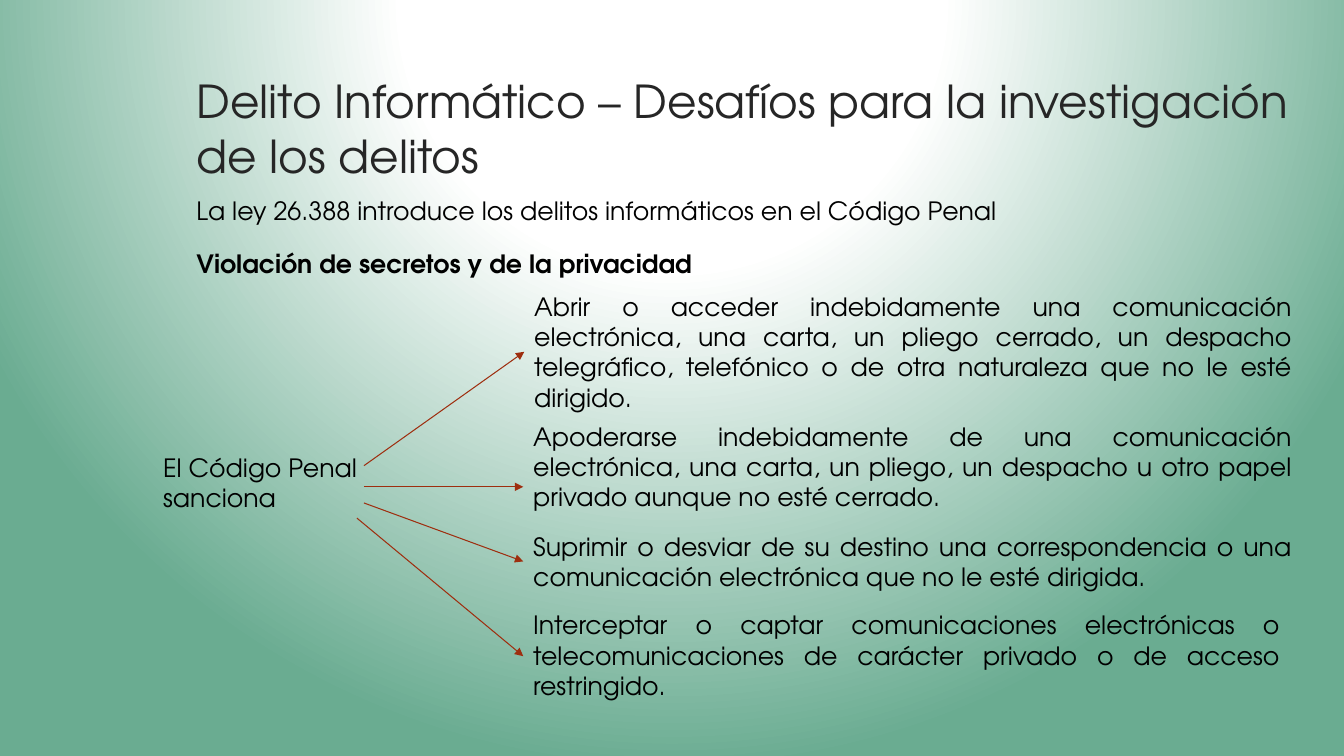
from dataclasses import dataclass

from pptx import Presentation
from pptx.dml.color import RGBColor
from pptx.enum.shapes import MSO_CONNECTOR
from pptx.enum.text import MSO_ANCHOR, MSO_AUTO_SIZE, PP_ALIGN
from pptx.oxml import parse_xml
from pptx.oxml.ns import nsdecls, qn
from pptx.util import Pt

STRAIGHT = MSO_CONNECTOR.STRAIGHT
LEFT, JUSTIFY = PP_ALIGN.LEFT, PP_ALIGN.JUSTIFY
TOP = MSO_ANCHOR.TOP
GROW, FIXED = MSO_AUTO_SIZE.SHAPE_TO_FIT_TEXT, MSO_AUTO_SIZE.NONE
EMU_PER_PX = 9144
TITLE_ONLY = 5


@dataclass(frozen=True)
class Theme:
    """Colours, font and type sizes of the slide."""
    font: str = "TeX Gyre Adventor"
    title_size: float = 32.4
    body_size: float = 18
    line_width: float = 0.75
    title: str = "262626"
    body: str = "000000"
    arrow: str = "9E2E0F"
    glow: str = "FFFFFF"
    edge: str = "6AAC91"


THEME = Theme()

TITLE = "Delito Informático – Desafíos para la investigación de los delitos"
LAW = "La ley 26.388 introduce los delitos informáticos en el Código Penal"
CHAPTER = "Violación de secretos y de la privacidad"
SOURCE = "El Código Penal sanciona"
OFFENCES = [
    ("Abrir o acceder indebidamente una comunicación electrónica, una carta, un pliego cerrado, "
     "un despacho telegráfico, telefónico o de otra naturaleza que no le esté dirigido.",
     (368, 0, 771, 131), (209, 178), (368, 65)),
    ("Apoderarse indebidamente de una comunicación electrónica, una carta, un pliego, "
     "un despacho u otro papel privado aunque no esté cerrado.",
     (367, 129, 772, 101), (209, 199), (367, 199)),
    ("Suprimir o desviar de su destino una correspondencia o una comunicación electrónica "
     "que no le esté dirigida.",
     (367, 238, 772, 71), (209, 215), (367, 273)),
    ("Interceptar o captar comunicaciones electrónicas o telecomunicaciones de carácter privado "
     "o de acceso restringido.",
     (367, 316, 760, 101), (202, 230), (367, 367)),
]


def px(length):
    """Turn px, at 100 to the inch, into EMU."""
    return length * EMU_PER_PX


def format_text(text_frame, size, color, bold=False, alignment=LEFT):
    """Apply font, colour and alignment to every paragraph."""
    for paragraph in text_frame.paragraphs:
        paragraph.alignment = alignment
        for run in paragraph.runs:
            run.font.name = THEME.font
            run.font.size = Pt(size)
            run.font.bold = bold
            run.font.color.rgb = RGBColor.from_string(color)


def add_text(slide, text, box, wrap=True, bold=False, alignment=LEFT):
    """Add a body text box."""
    shape = slide.shapes.add_textbox(*map(px, box))
    text_frame = shape.text_frame
    text_frame.text = text
    text_frame.word_wrap = wrap
    text_frame.auto_size = GROW
    format_text(text_frame, THEME.body_size, THEME.body, bold, alignment)


def add_arrow(slide, start, end):
    """Add a thin arrow from start to end."""
    connector = slide.shapes.add_connector(STRAIGHT, *map(px, start + end))
    connector.line.color.rgb = RGBColor.from_string(THEME.arrow)
    connector.line.width = Pt(THEME.line_width)
    properties = connector.element.spPr
    properties.find(qn("a:ln")).append(parse_xml(f'<a:tailEnd {nsdecls("a")} type="triangle"/>'))
    properties.append(parse_xml(f'<a:effectLst {nsdecls("a")}/>'))


def paint_background(slide):
    """Fill the background with a glow centred above the slide."""
    slide.background.fill.solid()
    properties = slide.background._cSld.bg.bgPr
    stops = "".join(
        f'<a:gs pos="{position * 1000}"><a:srgbClr val="{color}"/></a:gs>'
        for position, color in ((0, THEME.glow), (35, THEME.glow), (100, THEME.edge)))
    gradient = parse_xml(
        f'<a:gradFill {nsdecls("a")} rotWithShape="1"><a:gsLst>{stops}</a:gsLst>'
        '<a:path path="circle"><a:fillToRect l="50000" t="-80000" r="50000" b="180000"/></a:path>'
        '</a:gradFill>')
    properties.replace(properties.find(qn("a:solidFill")), gradient)


def add_heading(slide, box):
    """Place the title and the two lines below it."""
    left, top, width, height = box
    title = slide.shapes.title
    title.left, title.top, title.width, title.height = map(px, (left, top, width, 114))
    text_frame = title.text_frame
    text_frame.text = TITLE
    text_frame.word_wrap = True
    text_frame.auto_size = FIXED
    text_frame.vertical_anchor = TOP
    format_text(text_frame, THEME.title_size, THEME.title)
    add_text(slide, LAW, (left, top + 121, 825, 71), wrap=False)
    add_text(slide, CHAPTER, (left, top + height - 71, 518, 71), wrap=False, bold=True)


def add_offences(slide, box):
    """Place the source label, the offences and the arrows to them."""
    left, top, _, _ = box
    add_text(slide, SOURCE, (left, top + 160, 275, 71))
    for text, (x, y, width, height), start, end in OFFENCES:
        add_text(slide, text, (left + x, top + y, width, height), alignment=JUSTIFY)
        add_arrow(slide, (left + start[0], top + start[1]), (left + end[0], top + end[1]))


def main():
    """Build and save the slide."""
    presentation = Presentation()
    presentation.slide_width, presentation.slide_height = px(1333), px(750)
    slide = presentation.slides.add_slide(presentation.slide_layouts[TITLE_ONLY])
    paint_background(slide)
    add_heading(slide, (185, 68, 1118, 244))
    add_offences(slide, (152, 284, 1139, 417))
    presentation.save("out.pptx")


if __name__ == "__main__":
    main()
